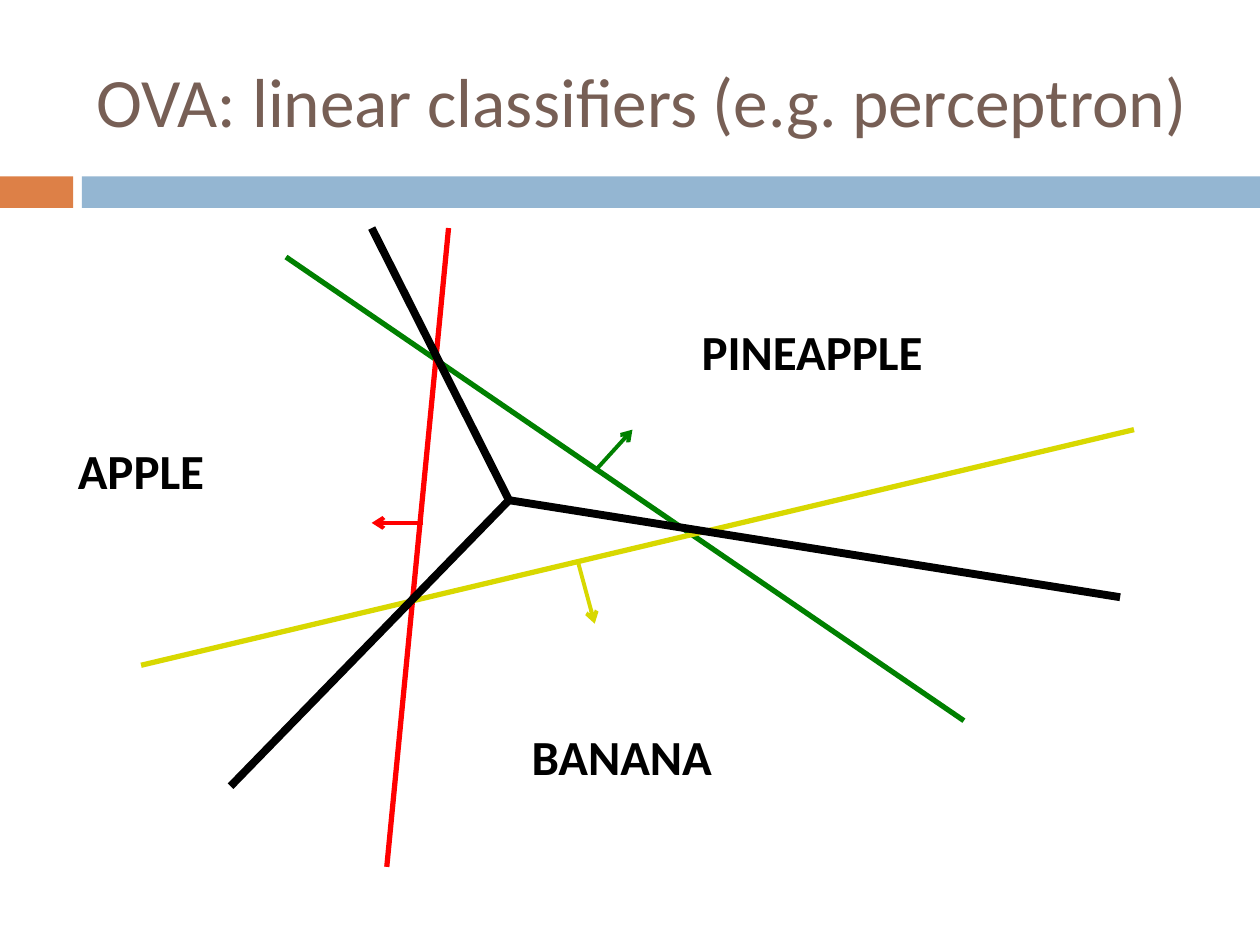
from typing import NamedTuple

from lxml import etree
from pptx import Presentation
from pptx.dml.color import RGBColor
from pptx.enum import shapes, text
from pptx.oxml import ns
from pptx.util import Inches, Pt

FONT = "Calibri"
RED, GREEN, YELLOW, BLACK = "FF0000", "008000", "D8D800", "000000"
CENTER = (4.04, 3.97)  # where the three class regions meet


class Segment(NamedTuple):
    start: tuple[float, float]
    end: tuple[float, float]
    color: str
    width: float
    arrow: bool = False


class Label(NamedTuple):
    words: str
    left: float
    top: float
    width: float


class Bar(NamedTuple):
    left: float
    width: float
    color: str


CLASSIFIERS = [
    Segment((2.27, 2.04), (7.65, 5.72), GREEN, 3),
    Segment((3.56, 1.81), (3.07, 6.88), RED, 3),
    Segment((9, 3.41), (1.12, 5.28), YELLOW, 3),
]
POSITIVE_SIDES = [
    Segment((3.36, 4.15), (2.95, 4.15), RED, 2.25, True),
    Segment((4.72, 3.74), (5.02, 3.41), GREEN, 2.25, True),
    Segment((4.59, 4.47), (4.72, 4.95), YELLOW, 2.25, True),
]
BOUNDARIES = [Segment(outer, CENTER, BLACK, 4.5)
              for outer in [(2.95, 1.81), (8.89, 4.74), (1.83, 6.24)]]
CLASSES = [
    Label("BANANA", 4.12, 5.72, 1.75),
    Label("APPLE", 0.52, 3.45, 1.24),
    Label("PINEAPPLE", 5.47, 2.5, 2.01),
]
HEADER_BARS = [Bar(0, 0.58, "DD8047"), Bar(0.65, 9.35, "94B6D2")]


def rgb(value: str) -> RGBColor:
    return RGBColor.from_string(value)


def add_bar(slide, bar: Bar) -> None:
    band = slide.shapes.add_shape(
        shapes.MSO_SHAPE.RECTANGLE,
        Inches(bar.left), Inches(1.4), Inches(bar.width), Inches(0.25))
    band.shadow.inherit = False
    band.fill.solid()
    band.fill.fore_color.rgb = rgb(bar.color)
    band.line.fill.background()


def add_segment(slide, segment: Segment) -> None:
    ends = [Inches(v) for v in (*segment.start, *segment.end)]
    stroke = slide.shapes.add_connector(shapes.MSO_CONNECTOR.STRAIGHT, *ends)
    stroke.line.color.rgb = rgb(segment.color)
    stroke.line.width = Pt(segment.width)
    if segment.arrow:
        etree.SubElement(stroke.line._get_or_add_ln(), ns.qn("a:tailEnd"), type="arrow")
    etree.SubElement(stroke._element.spPr, ns.qn("a:effectLst"))


def add_text(slide, words: str, left: float, top: float, width: float, height: float, *,
             size: float, color: str, bold: bool = False, wrap: bool = True,
             anchor=text.MSO_ANCHOR.TOP, fit=text.MSO_AUTO_SIZE.NONE) -> None:
    box = slide.shapes.add_textbox(
        Inches(left), Inches(top), Inches(width), Inches(height))
    frame = box.text_frame
    frame.word_wrap = wrap
    frame.auto_size = fit
    frame.vertical_anchor = anchor
    run = frame.paragraphs[0].add_run()
    run.text = words
    run.font.name = FONT
    run.font.size = Pt(size)
    run.font.bold = bold
    run.font.color.rgb = rgb(color)


def main() -> None:
    deck = Presentation()
    deck.slide_width, deck.slide_height = Inches(10), Inches(7.5)
    slide = deck.slides.add_slide(deck.slide_layouts[6])

    # Header
    for bar in HEADER_BARS:
        add_bar(slide, bar)
    add_text(slide, "OVA: linear classifiers (e.g. perceptron)", 0.67, 0.25, 8.92, 1.08,
             size=39.6, color="775F55", anchor=text.MSO_ANCHOR.MIDDLE)

    # Classifier lines, their positive sides, and the resulting boundaries
    for segment in CLASSIFIERS + POSITIVE_SIDES + BOUNDARIES:
        add_segment(slide, segment)

    # Class names
    for label in CLASSES:
        add_text(slide, label.words, label.left, label.top, label.width, 0.57,
                 size=28, color=BLACK, bold=True, wrap=False,
                 fit=text.MSO_AUTO_SIZE.SHAPE_TO_FIT_TEXT)

    deck.save("out.pptx")


if __name__ == "__main__":
    main()
